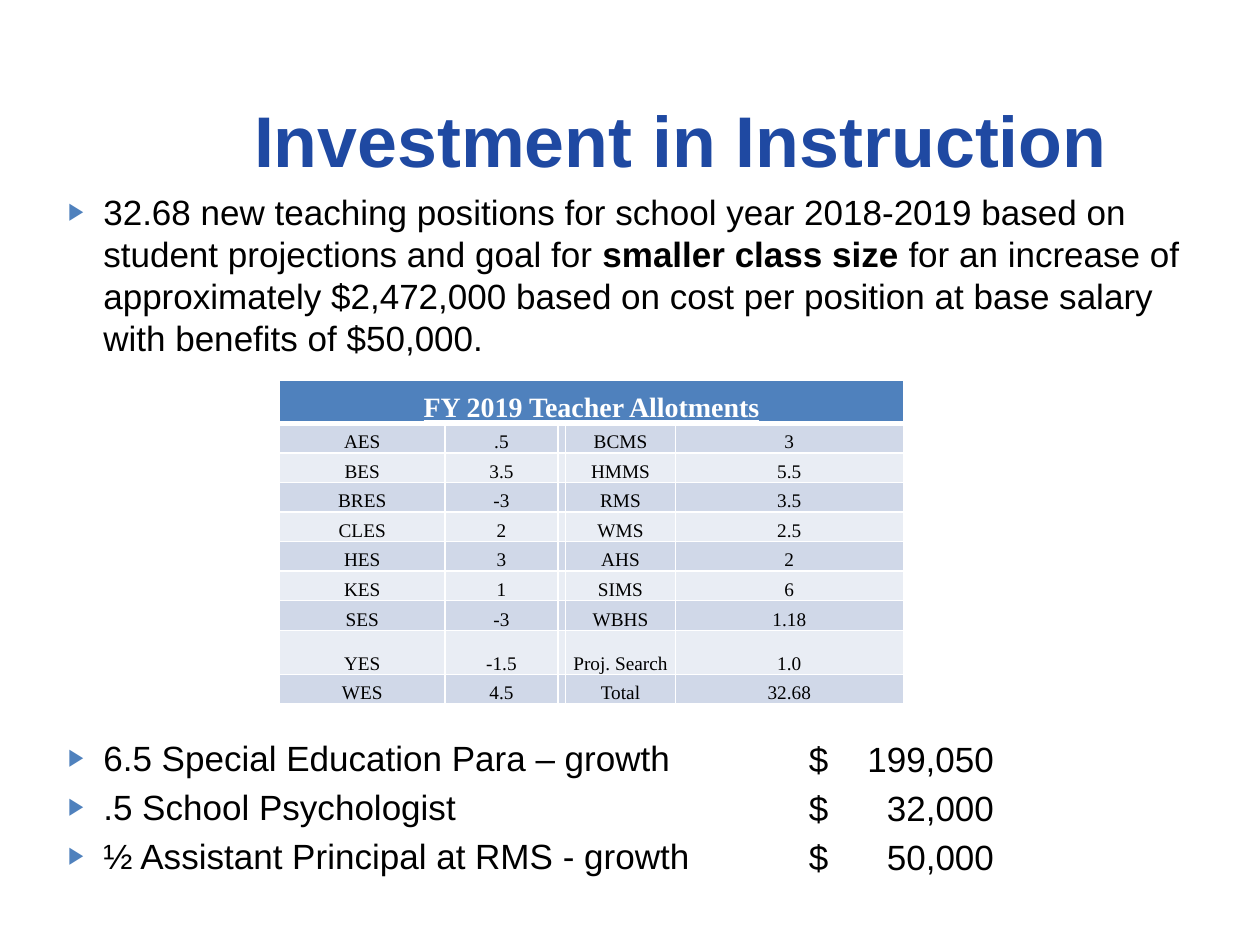
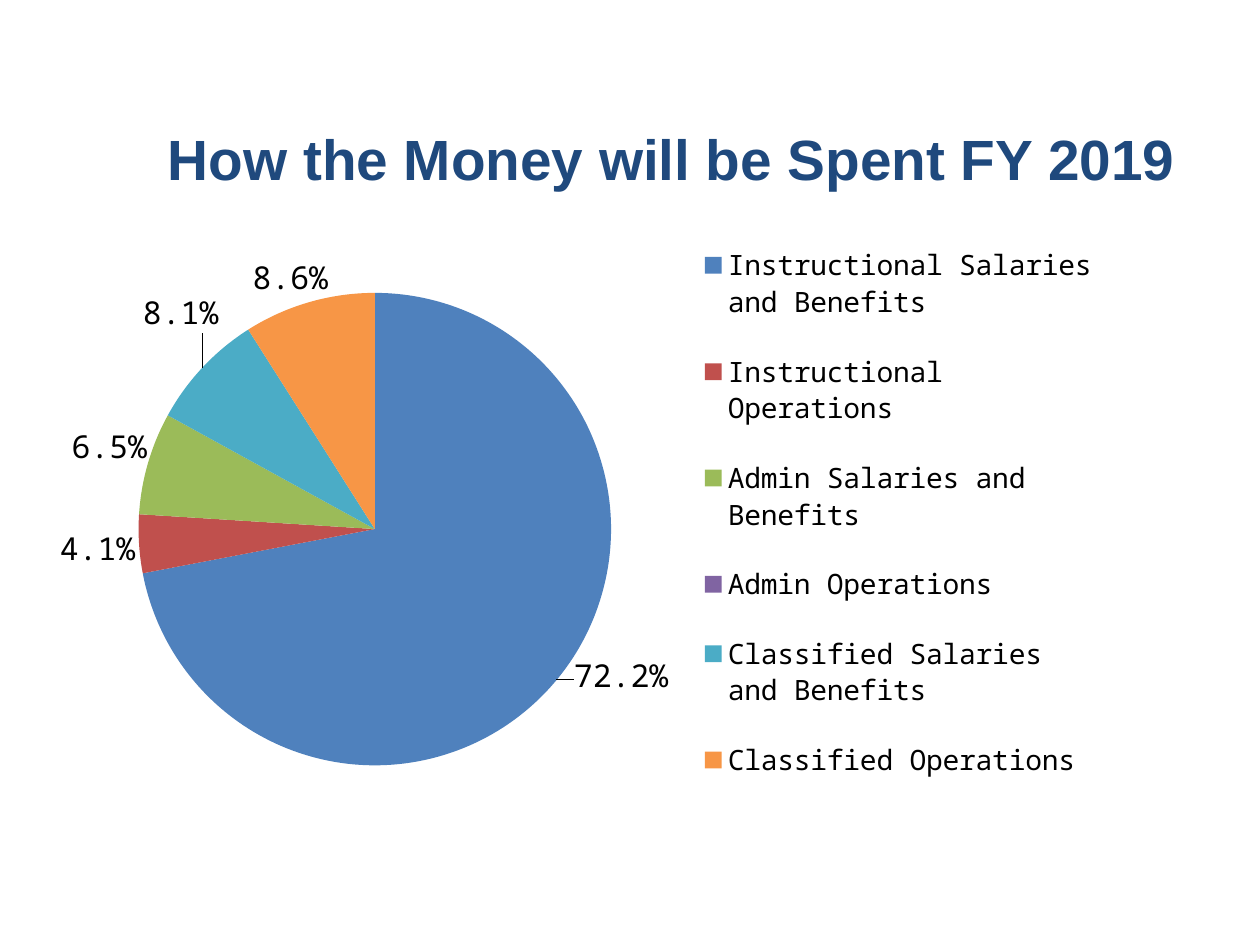
from dataclasses import dataclass
from lxml.etree import SubElement
from pptx import Presentation
from pptx.chart.data import CategoryChartData
from pptx.dml.color import RGBColor
from pptx.enum.chart import XL_CHART_TYPE, XL_LABEL_POSITION, XL_LEGEND_POSITION
from pptx.enum.text import MSO_ANCHOR, MSO_AUTO_SIZE, PP_ALIGN
from pptx.oxml.ns import qn
from pptx.util import Inches, Pt

TEACH = {
    "title": "Investment in Instruction",
    "lead": [
        ("32.68 new teaching positions for school year 2018-2019 based on "
         "student projections and goal for ", False),
        ("smaller class size ", True),
        ("for an increase of approximately $2,472,000 based on cost per "
         "position at base salary with benefits of $50,000.", False),
    ],
    "costs": [
        ("6.5 Special Education Para – growth", "199,050"),
        (".5 School Psychologist", "32,000"),
        ("½ Assistant Principal at RMS - growth", "50,000"),
    ],
    "head": "FY 2019 Teacher Allotments",
    "rows": [
        ("AES", ".5", "", "BCMS", "3"),
        ("BES", "3.5", "", "HMMS", "5.5"),
        ("BRES", "-3", "", "RMS", "3.5"),
        ("CLES", "2", "", "WMS", "2.5"),
        ("HES", "3", "", "AHS", "2"),
        ("KES", "1", "", "SIMS", "6"),
        ("SES", "-3", "", "WBHS", "1.18"),
        ("YES", "-1.5", "", "Proj. Search", "1.0"),
        ("WES", "4.5", "", "Total", "32.68"),
    ],
}
SPEND = {
    "title": "How the Money will be Spent FY 2019",
    # name, value, label, slice colour, label shift in inches
    "parts": [
        ("Instructional Salaries and Benefits", 72, "72.2%", "4F81BD", (0.09, -0.25)),
        ("Instructional Operations", 4, "4.1%", "C0504D", (0.03, 0.03)),
        ("Admin Salaries and Benefits", 7, "6.5%", "9BBB59", (0.05, 0.05)),
        ("Admin Operations", 0, ".5%", "8064A2", None),
        ("Classified Salaries and Benefits", 8, "8.1%", "4BACC6", (0.17, -0.23)),
        ("Classified Operations", 9, "8.6%", "F79646", (0.17, 0.03)),
    ],
}
CHART = (9.5, 4.99)


@dataclass(frozen=True)
class Theme:
    royal: str = "1F49A2"
    navy: str = "1F497D"
    blue: str = "4F81BD"
    dark: str = "D0D8E8"
    light: str = "E9EDF4"
    white: str = "FFFFFF"
    black: str = "000000"
    sans: str = "Arial"
    serif: str = "Times New Roman"
    mono: str = "Noto Sans Mono"
    body: float = 20
    line: float = 24
    gap: float = 4
    head: float = 16
    cell: float = 11
    label: float = 18
    key: float = 16


T = Theme()
BODY = dict(name=T.sans, size=Pt(T.body))


def style(font, color=T.black, **fmt):
    for key, value in fmt.items():
        setattr(font, key, value)
    font.color.rgb = RGBColor.from_string(color)


def write(para, text, **fmt):
    run = para.add_run()
    run.text = text
    style(run.font, **fmt)


def move(shape, *box):
    for side, value in zip(("left", "top", "width", "height"), box):
        setattr(shape, side, Inches(value))


def paint(fill, color):
    fill.solid()
    fill.fore_color.rgb = RGBColor.from_string(color)


def node(parent, tag, **attrs):
    return SubElement(parent, qn(tag), {k: str(v) for k, v in attrs.items()})


def add_title(slide, text, box, size, color, lift):
    """Centre the title in its box, raised by lift inches."""
    title = slide.shapes.title
    move(title, *box)
    frame = title.text_frame
    frame.auto_size = MSO_AUTO_SIZE.NONE
    frame.vertical_anchor = MSO_ANCHOR.MIDDLE
    frame.margin_bottom = Inches(0.05 + 2 * lift)
    para = frame.paragraphs[0]
    para.alignment = PP_ALIGN.CENTER
    write(para, text, name=T.sans, size=Pt(size), bold=True, color=color)


def next_para(frame, first, before=T.gap):
    para = frame.paragraphs[0] if first else frame.add_paragraph()
    para.line_spacing = Pt(T.line)
    para.space_before = Pt(0 if first else before)
    return para


def add_bullet(para):
    props = para._p.get_or_add_pPr()
    props.set("marL", str(Inches(0.4)))
    props.set("indent", str(Inches(-0.28)))
    node(node(props, "a:buClr"), "a:srgbClr", val=T.blue)
    node(props, "a:buSzPct", val=68000)
    node(props, "a:buFont", typeface=T.sans)
    node(props, "a:buChar", char="▶")


def add_list(slide, lead, costs):
    body = slide.placeholders[1]
    move(body, 0.32, 1.46, 9.35, 5.93)
    frame = body.text_frame
    frame.auto_size = MSO_AUTO_SIZE.NONE
    para = next_para(frame, True)
    add_bullet(para)
    for text, bold in lead:
        write(para, text, bold=bold, **BODY)
    for i, (text, _) in enumerate(costs):
        para = next_para(frame, False, T.gap if i else 9 * T.line)
        add_bullet(para)
        write(para, text, **BODY)


def add_sums(slide, costs):
    box = slide.shapes.add_textbox(*map(Inches, (6.42, 5.85, 1.6, 1.15)))
    frame = box.text_frame
    for side in ("left", "top", "right", "bottom"):
        setattr(frame, f"margin_{side}", 0)
    frame.word_wrap = True
    for i, (_, amount) in enumerate(costs):
        para = next_para(frame, i == 0)
        tabs = node(para._p.get_or_add_pPr(), "a:tabLst")
        node(tabs, "a:tab", pos=Inches(1.47), algn="r")
        write(para, f"$\t{amount}", **BODY)


def fill_cell(cell, text, back, base=1, **fmt):
    """Fill a cell; base is the width of its lower border in points."""
    cell.vertical_anchor = MSO_ANCHOR.BOTTOM
    for side in ("left", "top", "right"):
        setattr(cell, f"margin_{side}", Inches(0.01))
    cell.margin_bottom = 0
    props = cell._tc.get_or_add_tcPr()
    for side in "LRTB":
        edge = node(props, f"a:ln{side}", w=Pt(base if side == "B" else 1))
        node(node(edge, "a:solidFill"), "a:srgbClr", val=T.white)
    paint(cell.fill, back)
    para = cell.text_frame.paragraphs[0]
    para.alignment = PP_ALIGN.CENTER
    if text:
        write(para, text, name=T.serif, **fmt)
    else:
        node(para._p, "a:endParaRPr", sz=T.cell * 100)


def add_grid(slide, head, rows):
    widths, height, top, tall = (1.31, 0.9, 0.06, 0.87, 1.81), 2.57, 0.34, 0.35
    plain = (height - top - tall) / (len(rows) - 1)
    grid = slide.shapes.add_table(
        len(rows) + 1, len(widths),
        *map(Inches, (2.22, 3.02, sum(widths), height))).table
    for col, width in zip(grid.columns, widths):
        col.width = Inches(width)
    grid.rows[0].height = Inches(top)
    first = grid.cell(0, 0)
    first.merge(grid.cell(0, len(widths) - 1))
    fill_cell(first, head, T.blue, base=3, size=Pt(T.head),
              bold=True, underline=True, color=T.white)
    for r, row in enumerate(rows, 1):
        grid.rows[r].height = Inches(tall if row[0] == "YES" else plain)
        for c, text in enumerate(row):
            fill_cell(grid.cell(r, c), text, T.dark if r % 2 else T.light,
                      size=Pt(T.cell))


def layout(parent, index, box, **modes):
    """Place a chart part by a box in inches, stored as shares of the chart."""
    for old in parent.findall(qn("c:layout")):
        parent.remove(old)
    outer = node(parent, "c:layout")
    parent.insert(index, outer)
    manual = node(outer, "c:manualLayout")
    for tag, value in modes.items():
        node(manual, f"c:{tag}", val=value)
    for tag, value, whole in zip("xywh", box, CHART * 2):
        node(manual, f"c:{tag}", val=value / whole)


def add_pie(slide, parts):
    data = CategoryChartData()
    data.categories = [part[0] for part in parts]
    data.add_series("Series 1", [part[1] for part in parts])
    chart = slide.shapes.add_chart(
        XL_CHART_TYPE.PIE, *map(Inches, (0, 1.55, *CHART)), data).chart
    chart.has_title = False
    style(chart.font, name=T.mono, size=Pt(T.label))
    chart.has_legend = True
    legend = chart.legend
    legend.position = XL_LEGEND_POSITION.RIGHT
    legend.include_in_layout = False
    style(legend.font, name=T.mono, size=Pt(T.key))
    fixed = dict(xMode="edge", yMode="edge")
    layout(legend._element, 1, (5.53, 0.15, 3.2, 4.74), **fixed)
    area = chart._chartSpace.find(f".//{qn('c:plotArea')}")
    layout(area, 0, (1.1, 0.77, 3.75, 3.76), layoutTarget="inner", **fixed)
    plot = chart.plots[0]
    plot.vary_by_categories = True
    for i, (_, _, text, color, shift) in enumerate(parts):
        point = plot.series[0].points[i]
        paint(point.format.fill, color)
        label = point.data_label
        write(label.text_frame.paragraphs[0], text,
              name=T.mono, size=Pt(T.label))
        label.position = XL_LABEL_POSITION.OUTSIDE_END
        if shift:
            layout(label._get_or_add_dLbl(), 1, shift)


def main():
    deck = Presentation()
    deck.slide_width, deck.slide_height = Inches(10), Inches(7.5)
    teach = deck.slides.add_slide(deck.slide_layouts[1])
    add_list(teach, TEACH["lead"], TEACH["costs"])
    add_sums(teach, TEACH["costs"])
    add_title(teach, TEACH["title"], (1.31, 0.71, 8.19, 0.84), 41, T.royal, 0.03)
    add_grid(teach, TEACH["head"], TEACH["rows"])
    spend = deck.slides.add_slide(deck.slide_layouts[5])
    add_pie(spend, SPEND["parts"])
    add_title(spend, SPEND["title"], (0.83, 0.94, 9, 0.75), 32.4, T.navy, 0.06)
    deck.save("out.pptx")


if __name__ == "__main__":
    main()
